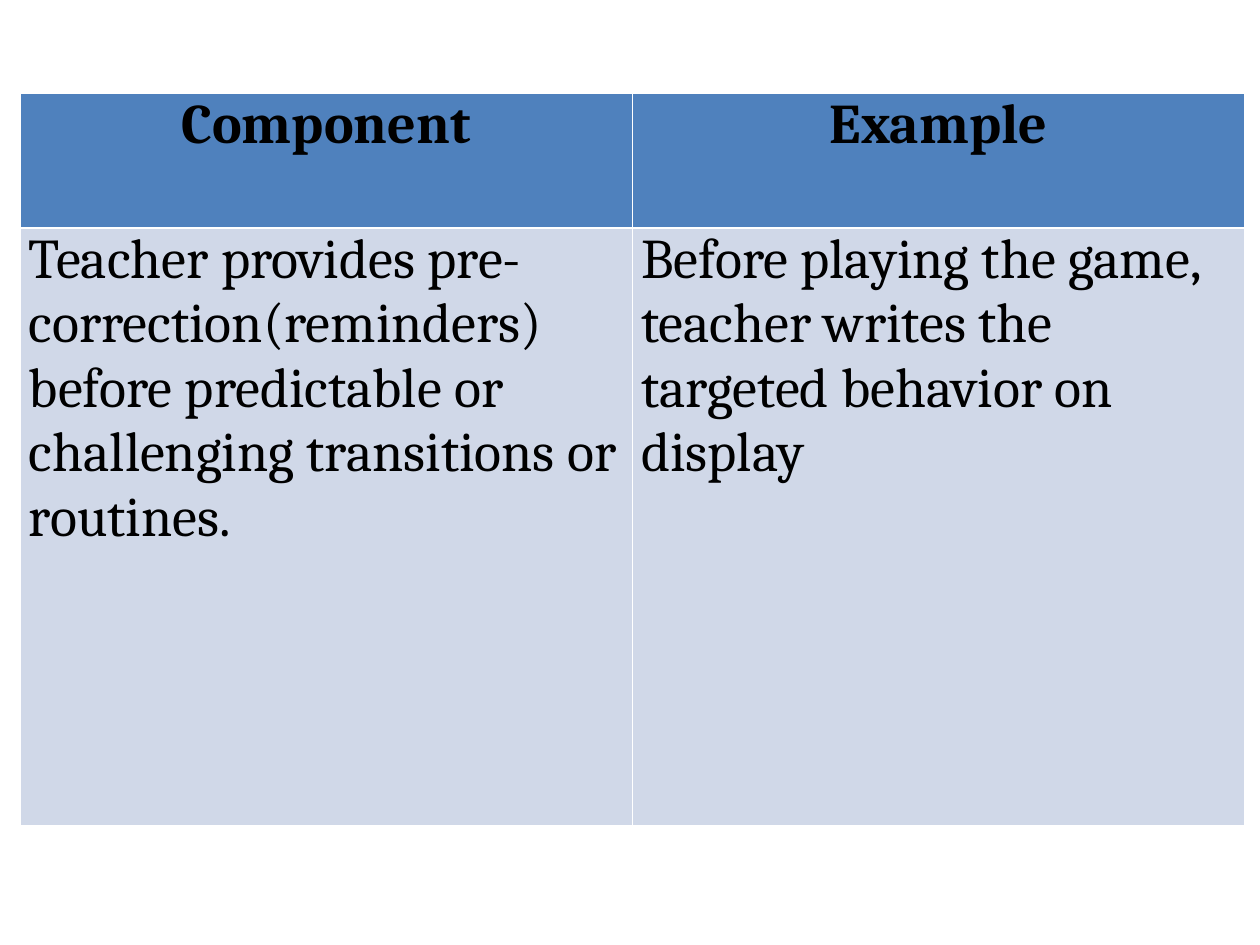
from dataclasses import dataclass

from lxml.etree import SubElement
from pptx import Presentation
from pptx.dml.color import RGBColor
from pptx.enum.text import PP_ALIGN as Align
from pptx.oxml.ns import qn
from pptx.table import _Cell as Cell
from pptx.util import Inches, Pt

BLACK = RGBColor(0x00, 0x00, 0x00)
WHITE = RGBColor(0xFF, 0xFF, 0xFF)
HEADER_BLUE = RGBColor(0x4F, 0x81, 0xBD)
BODY_BLUE = RGBColor(0xD0, 0xD8, 0xE8)


@dataclass
class Row:
    height: float
    fill: RGBColor
    bold: bool
    align: Align
    texts: tuple[str, str]


ROWS = [
    Row(1.07, HEADER_BLUE, True, Align.CENTER, ("Component", "Example")),
    Row(4.74, BODY_BLUE, False, Align.LEFT, (
        "Teacher provides pre-correction(reminders) before predictable or "
        "challenging transitions or routines.",
        "Before playing the game, teacher writes the targeted behavior on display",
    )),
]
COL_WIDTH = 4.86


def add_borders(cell: Cell, color: RGBColor, width: float) -> None:
    """Draw all four cell edges; they must precede the fill in the XML."""
    tc_pr = cell._tc.get_or_add_tcPr()
    for i, tag in enumerate(("a:lnL", "a:lnR", "a:lnT", "a:lnB")):
        ln = SubElement(tc_pr, qn(tag), w=str(Pt(width)))
        SubElement(SubElement(ln, qn("a:solidFill")), qn("a:srgbClr"), val=str(color))
        tc_pr.insert(i, ln)


def fill_cell(cell: Cell, text: str, row: Row) -> None:
    cell.margin_left = cell.margin_right = Inches(0.07)
    cell.margin_top = cell.margin_bottom = 0
    cell.fill.solid()
    cell.fill.fore_color.rgb = row.fill
    add_borders(cell, WHITE, 1)
    cell.text = text
    p = cell.text_frame.paragraphs[0]
    p.alignment = row.align
    p.font.name = "Cambria"
    p.font.size = Pt(32)
    p.font.bold = row.bold
    p.font.color.rgb = BLACK


def main() -> None:
    prs = Presentation()
    prs.slide_width, prs.slide_height = Inches(10), Inches(7.5)
    s = prs.slides.add_slide(prs.slide_layouts[6])

    # Component and example table
    table = s.shapes.add_table(
        len(ROWS), 2, Inches(0.16), Inches(0.74),
        Inches(2 * COL_WIDTH), Inches(sum(row.height for row in ROWS)),
    ).table
    for col in table.columns:
        col.width = Inches(COL_WIDTH)
    for i, row in enumerate(ROWS):
        table.rows[i].height = Inches(row.height)
        for j, text in enumerate(row.texts):
            fill_cell(table.cell(i, j), text, row)

    prs.save("out.pptx")


if __name__ == "__main__":
    main()
